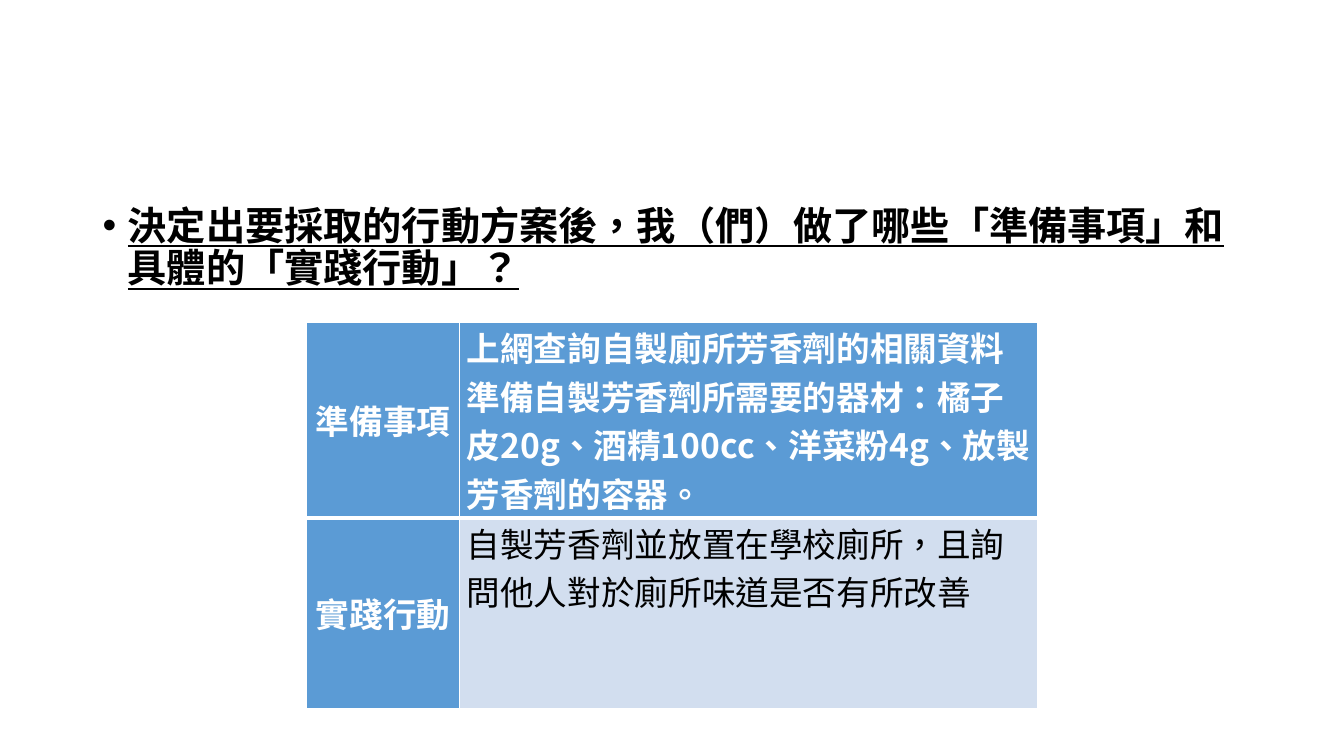
from dataclasses import dataclass

from lxml import etree
from pptx import Presentation
from pptx import util as u
from pptx.dml.color import RGBColor
from pptx.enum import text
from pptx.oxml import ns

PX = 9144  # EMU per px, 100 px to the inch


@dataclass(frozen=True)
class Theme:
    font: str = "Noto Sans CJK SC"
    language: str = "zh-TW"
    black: str = "000000"
    white: str = "FFFFFF"
    blue: str = "5B9BD5"
    pale: str = "D2DEEF"
    question_size: int = 28
    table_size: int = 24
    thin: int = 1
    thick: int = 3


THEME = Theme()

QUESTION = "決定出要採取的行動方案後，我（們）做了哪些「準備事項」和具體的「實踐行動」？"
ACTIONS = [
    ("準備事項", [
        "上網查詢自製廁所芳香劑的相關資料",
        "準備自製芳香劑所需要的器材：橘子皮20g、酒精100cc、洋菜粉4g、放製芳香劑的容器。",
    ]),
    ("實踐行動", ["自製芳香劑並放置在學校廁所，且詢問他人對於廁所味道是否有所改善"]),
]


def px(length):
    return u.Emu(length * PX)


def write_text(paragraph, content, *, size, color, bold=False, underline=False,
               align=text.PP_ALIGN.LEFT):
    paragraph.alignment = align
    run = paragraph.add_run()
    run.text = content
    font = run.font
    font.size = u.Pt(size)
    font.bold = bold
    font.underline = underline
    font.color.rgb = RGBColor.from_string(color)
    font.name = THEME.font
    # East Asian typeface, and the language that centres the punctuation
    properties = run._r.get_or_add_rPr()
    properties.set("lang", THEME.language)
    etree.SubElement(properties, ns.qn("a:ea"), typeface=THEME.font)


def add_bullet(paragraph, indent):
    properties = paragraph._p.get_or_add_pPr()
    properties.set("marL", str(px(indent)))
    properties.set("indent", str(-px(indent)))
    etree.SubElement(properties, ns.qn("a:buFont"), typeface="Arial")
    etree.SubElement(properties, ns.qn("a:buChar"), char="•")


def set_borders(cell, top, bottom):
    properties = cell._tc.get_or_add_tcPr()
    widths = {"lnL": THEME.thin, "lnR": THEME.thin, "lnT": top, "lnB": bottom}
    for position, (side, width) in enumerate(widths.items()):
        line = etree.Element(ns.qn(f"a:{side}"), w=str(u.Pt(width)))
        fill = etree.SubElement(line, ns.qn("a:solidFill"))
        etree.SubElement(fill, ns.qn("a:srgbClr"), val=THEME.white)
        properties.insert(position, line)


def fill_cell(cell, lines, fill, anchor, **text_format):
    cell.margin_left = cell.margin_right = px(7)
    cell.margin_top = cell.margin_bottom = 0
    cell.vertical_anchor = anchor
    cell.fill.solid()
    cell.fill.fore_color.rgb = RGBColor.from_string(fill)
    frame = cell.text_frame
    for index, line in enumerate(lines):
        paragraph = frame.add_paragraph() if index else frame.paragraphs[0]
        write_text(paragraph, line, size=THEME.table_size, **text_format)


def add_question(slide, left, top, width, height):
    shape = slide.shapes.add_textbox(px(left), px(top), px(width), px(height))
    frame = shape.text_frame
    frame.word_wrap = True
    paragraph = frame.paragraphs[0]
    paragraph.line_spacing = 0.9
    add_bullet(paragraph, 25)
    write_text(paragraph, QUESTION, size=THEME.question_size, color=THEME.black,
               bold=True, underline=True)


def add_action_table(slide, left, top, width, height):
    label_width, first_height = 152, 194  # the first row holds four lines
    table = slide.shapes.add_table(len(ACTIONS), 2, px(left), px(top),
                                   px(width), px(height)).table
    table.first_row = table.horz_banding = False
    table.columns[0].width = px(label_width)
    table.columns[1].width = px(width - label_width)
    table.rows[0].height = px(first_height)
    table.rows[1].height = px(height - first_height)

    for row, (label, details) in enumerate(ACTIONS):
        first = row == 0
        fill_cell(table.cell(row, 0), [label], THEME.blue, text.MSO_ANCHOR.MIDDLE,
                  color=THEME.white, bold=True, align=text.PP_ALIGN.CENTER)
        fill_cell(table.cell(row, 1), details, THEME.blue if first else THEME.pale,
                  text.MSO_ANCHOR.TOP, bold=first,
                  color=THEME.white if first else THEME.black)
        # The thick rule separates the two rows
        top_width, bottom_width = ((THEME.thin, THEME.thick) if first
                                   else (THEME.thick, THEME.thin))
        for column in range(2):
            set_borders(table.cell(row, column), top_width, bottom_width)


def main():
    presentation = Presentation()
    presentation.slide_width, presentation.slide_height = px(1333), px(750)
    slide = presentation.slides.add_slide(presentation.slide_layouts[6])
    add_question(slide, 92, 200, 1150, 476)
    add_action_table(slide, 304, 320, 725, 383)
    presentation.save("out.pptx")


if __name__ == "__main__":
    main()
